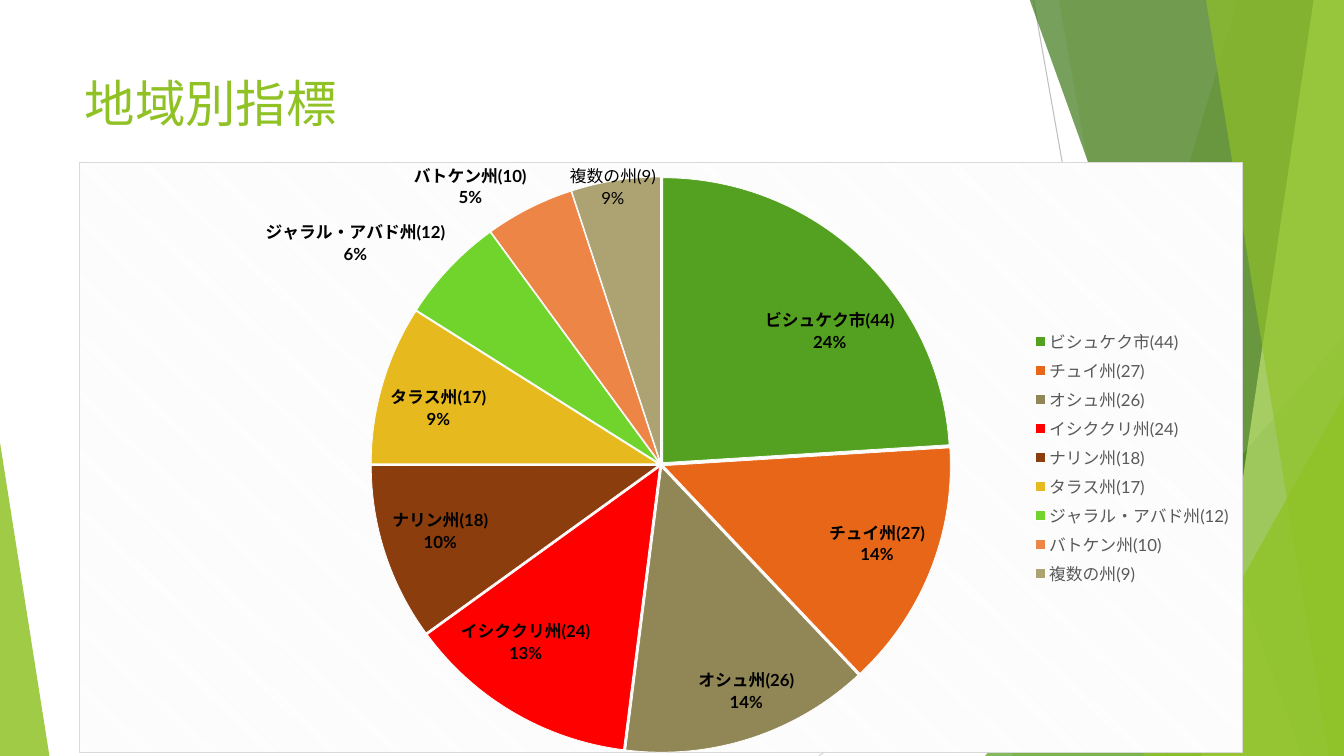
from lxml import etree
from pptx import Presentation
from pptx.chart.data import CategoryChartData
from pptx.dml.color import RGBColor
from pptx.enum import chart as charts, dml, shapes, text
from pptx.oxml import ns
from pptx.util import Inches, Pt

FONT = "Lato"
REGIONS = [  # name, share in percent, slice colour
    ("ビシュケク市(44)", 24, "54A021"),
    ("チュイ州(27)", 14, "E76618"),
    ("オシュ州(26)", 14, "918655"),
    ("イシククリ州(24)", 13, "FF0000"),
    ("ナリン州(18)", 10, "8B3D0E"),
    ("タラス州(17)", 9, "E6B91E"),
    ("ジャラル•アバド州(12)", 6, "70D42D"),
    ("バトケン州(10)", 5, "EC8546"),
    ("複数の州(9)", 5, "ACA272"),
]


def rgb(value):
    return RGBColor.from_string(value)


def sub(parent, tag, **attributes):
    return etree.SubElement(parent, ns.qn(tag), attributes)


def manual_layout(**settings):
    layout = etree.Element(ns.qn("c:layout"))
    manual = sub(layout, "c:manualLayout")
    for name, value in settings.items():
        sub(manual, "c:" + name, val=str(value))
    return layout


def style_font(font, size, color, bold=False):
    for name, value in {"name": FONT, "size": Pt(size), "bold": bold}.items():
        setattr(font, name, value)
    font.color.rgb = rgb(color)


def paint(facet, color, opacity):
    facet.shadow.inherit = False
    facet.fill.solid()
    facet.fill.fore_color.rgb = rgb(color)
    sub(facet.fill._xPr.find(".//" + ns.qn("a:srgbClr")), "a:alpha", val=str(opacity * 1000))
    facet.line.fill.background()


def add_ray(slide, start, end, color):
    ray = slide.shapes.add_connector(
        shapes.MSO_CONNECTOR.STRAIGHT, *map(Inches, start + end))
    ray.line.color.rgb = rgb(color)
    ray.line.width = Pt(0.75)
    sub(ray._element.spPr, "a:effectLst")


def add_band(slide, top_left, bottom_left, color, opacity):
    """Full-height facet between a slanted left edge and the slide's right edge."""
    corners = [(top_left, -0.01), (13.33, -0.01), (13.33, 7.5), (bottom_left, 7.5)]
    points = [(Inches(x), Inches(y)) for x, y in corners]
    builder = slide.shapes.build_freeform(*points[0])
    builder.add_line_segments(points[1:], close=True)
    paint(builder.convert_to_shape(), color, opacity)


def add_wedge(slide, box, apex, color, opacity):
    wedge = slide.shapes.add_shape(
        shapes.MSO_SHAPE.ISOSCELES_TRIANGLE, *map(Inches, box))
    wedge.adjustments[0] = apex
    paint(wedge, color, opacity)


def add_facets(slide):
    add_ray(slide, (10.25, 0), (11.58, 7.5), "BFBFBF")
    add_ray(slide, (13.33, 4.03), (8.12, 7.5), "D9D9D9")
    add_band(slide, 12.28, 10.04, "90C226", 30)
    add_band(slide, 10.5, 11.83, "90C226", 20)
    add_wedge(slide, (9.77, 3.33, 3.56, 4.17), 1, "54A021", 72)
    add_band(slide, 10.21, 12.91, "3F7819", 70)
    add_band(slide, 13.03, 11.92, "C0E474", 70)
    add_band(slide, 11.96, 13.18, "90C226", 65)
    add_wedge(slide, (11.34, 3.93, 1.99, 3.57), 1, "90C226", 80)
    add_wedge(slide, (0, 4.39, 0.49, 3.11), 0, "90C226", 85)


def set_title(slide, wording):
    title = slide.shapes.title
    box = {"left": 0.74, "top": 0.67, "width": 9.4, "height": 1.44}
    for name, value in box.items():
        setattr(title, name, Inches(value))
    title.text_frame.text = wording
    title.text_frame.vertical_anchor = text.MSO_ANCHOR.TOP
    heading = title.text_frame.paragraphs[0]
    heading.alignment = text.PP_ALIGN.LEFT
    style_font(heading.runs[0].font, 36, "90C226")


def style_chart_area(chart):
    # Hatched background and thin border
    area = etree.Element(ns.qn("c:spPr"))
    hatch = sub(area, "a:pattFill", prst="dkDnDiag")
    for tag, color in (("a:fgClr", "F2F2F2"), ("a:bgClr", "FFFFFF")):
        sub(sub(hatch, tag), "a:srgbClr", val=color)
    border = sub(sub(area, "a:ln", w=str(Pt(0.75))), "a:solidFill")
    sub(border, "a:srgbClr", val="D9D9D9")
    chart._chartSpace.chart.addnext(area)

    # Plot area fills the frame below a narrow top margin
    plot_area = chart._chartSpace.chart.plotArea
    for layout in plot_area.findall(ns.qn("c:layout")):
        plot_area.remove(layout)
    plot_area.insert(0, manual_layout(
        layoutTarget="inner", xMode="edge", yMode="edge", x=0, y=0.025, w=1, h=0.975))


def label_slices(series):
    labels = series.data_labels
    settings = {"show_percentage": True, "show_category_name": True,
                "show_value": False, "position": charts.XL_LABEL_POSITION.BEST_FIT}
    for name, value in settings.items():
        setattr(labels, name, value)
    style_font(labels.font, 12, "000000", bold=True)
    separator = etree.Element(ns.qn("c:separator"))
    separator.text = "\n"
    labels._element.find(ns.qn("c:showBubbleSize")).addnext(separator)

    # The last slice has its own wording, shifted up and to the left
    last = series.points[len(REGIONS) - 1].data_label
    last.text_frame.text = "複数の州(9)\n9%"
    for paragraph in last.text_frame.paragraphs:
        style_font(paragraph.runs[0].font, 12, "000000")
    last.position = charts.XL_LABEL_POSITION.INSIDE_END
    index = labels._element.find(ns.qn("c:dLbl")).find(ns.qn("c:idx"))
    index.addnext(manual_layout(x=-0.04, y=-0.04))


def add_region_pie(slide):
    data = CategoryChartData()
    data.categories = [name for name, _, _ in REGIONS]
    data.add_series("Series 1", [share for _, share, _ in REGIONS])
    chart = slide.shapes.add_chart(
        charts.XL_CHART_TYPE.PIE, *map(Inches, (0.78, 1.57, 11.55, 5.9)), data).chart
    chart.has_title = False
    style_font(chart.font, 10, "000000")
    style_chart_area(chart)

    # Legend
    chart.has_legend = True
    chart.legend.position = charts.XL_LEGEND_POSITION.RIGHT
    chart.legend.include_in_layout = False
    style_font(chart.legend.font, 12, "595959")

    # Slices
    chart.plots[0].vary_by_categories = True
    series = chart.plots[0].series[0]
    for index, (_, _, color) in enumerate(REGIONS):
        portion = series.points[index].format
        portion.fill.solid()
        portion.fill.fore_color.rgb = rgb(color)
        portion.line.color.rgb = rgb("FFFFFF")
        portion.line.width = Pt(0.5)
        portion.line.dash_style = dml.MSO_LINE.SOLID
    explosion = etree.Element(ns.qn("c:explosion"), val="1")
    series._element.find(ns.qn("c:dPt")).addprevious(explosion)
    label_slices(series)


def main():
    deck = Presentation()
    deck.slide_width, deck.slide_height = Inches(13.33), Inches(7.5)
    slide = deck.slides.add_slide(deck.slide_layouts[5])
    add_facets(slide)
    set_title(slide, "地域別指標")
    add_region_pie(slide)
    deck.save("out.pptx")


if __name__ == "__main__":
    main()
